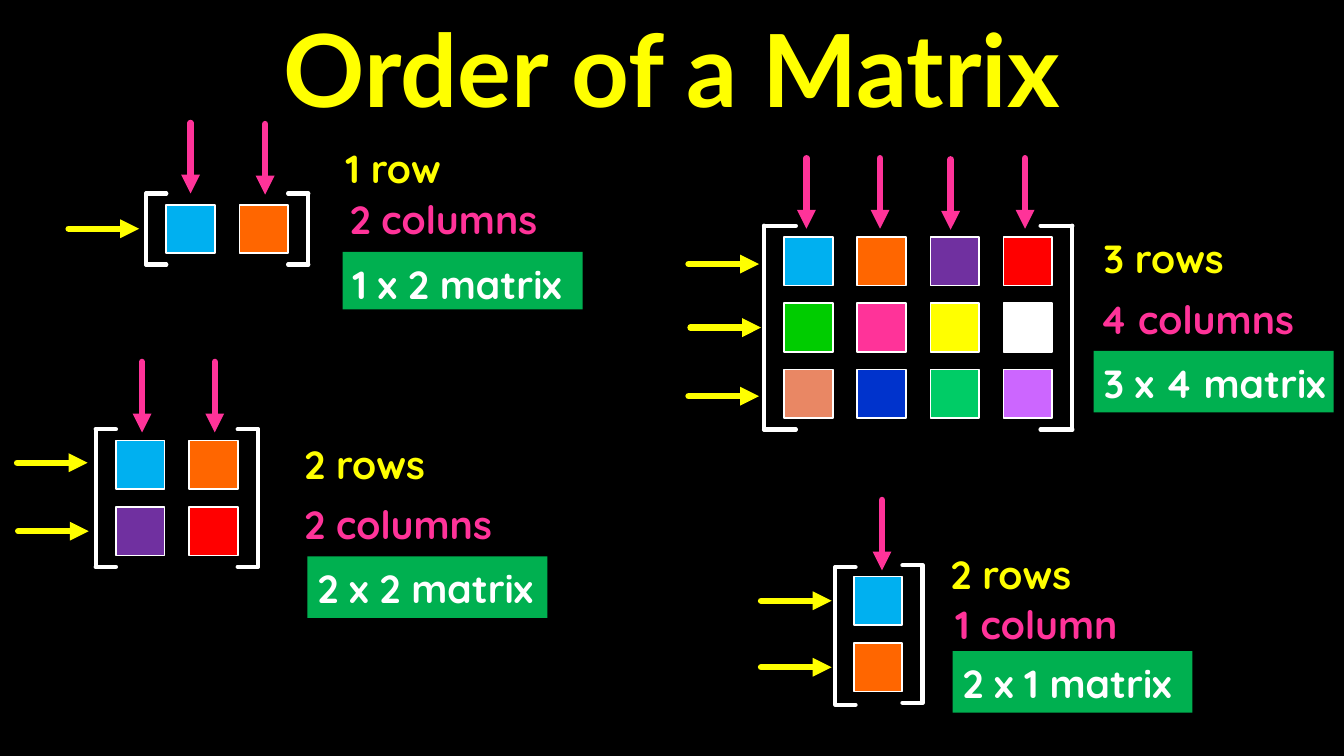
import lxml.etree
import pptx
import pptx.dml.color
import pptx.enum.shapes
import pptx.enum.text
import pptx.oxml.ns
import pptx.util

COLORS = {
    "black": "000000", "white": "FFFFFF", "yellow": "FFFF00", "pink": "FF3399",
    "box": "00B050", "blue": "00B0F0", "orange": "FF6600", "purple": "7030A0",
    "red": "FF0000", "green": "00CC00", "salmon": "E98764", "navy": "0033CC",
    "mint": "00CC66", "lilac": "CC66FF",
}
MATRICES = [
    {
        "cells": [["blue", "orange"]],
        "origin": (118.8, 146.2), "arm": 14.4, "left_shift": 0,
        "row_arrows": [(49, 163.4)],
        "column_arrows": [(136.1, 87.8), (189.4, 88.6)],
        "captions": [("1 row", 239.8, 97.2, 87.8, 41),
                     ("2 columns", 242.6, 133.9, 154, 41),
                     ("1 x 2 matrix", 244.8, 180, 171.4, 41)],
    },
    {
        "cells": [["blue", "orange"], ["purple", "red"]],
        "origin": (82.8, 314.6), "arm": 14.4, "left_shift": 0,
        "row_arrows": [(12.2, 330.5), (13, 379.4)],
        "column_arrows": [(101.5, 258.5), (153.4, 258.5)],
        "captions": [("2 rows", 210.2, 308.9, 100.8, 41),
                     ("2 columns", 210.2, 351.4, 154, 41),
                     ("2 x 2 matrix", 219.6, 397.4, 171.4, 43.9)],
    },
    {
        "cells": [["blue", "orange", "purple", "red"],
                  ["green", "pink", "yellow", "white"],
                  ["salmon", "navy", "mint", "lilac"]],
        "origin": (560.2, 169.2), "arm": 22.7, "left_shift": 0,
        "row_arrows": [(491.8, 188.6), (493.2, 234), (491.8, 283)],
        "column_arrows": [(576, 113), (628.6, 113), (679, 113.8), (732.2, 113)],
        "captions": [("3 rows", 781.2, 161.3, 100.8, 43.9),
                     ("4 columns", 778.3, 205.2, 154, 43.9),
                     ("3 x 4 matrix", 781.2, 250.6, 171.4, 43.9)],
    },
    {
        "cells": [["blue"], ["orange"]],
        "origin": (609.8, 411.8), "arm": 14.4, "left_shift": 1.3,
        "row_arrows": [(543.6, 429.1), (543.6, 476.6)],
        "column_arrows": [(630, 357.1)],
        "captions": [("2 rows", 671.8, 387.4, 100.8, 41),
                     ("1 column", 675.4, 422.6, 141.8, 41),
                     ("2 x 1 matrix", 680.4, 465.1, 171.4, 43.9)],
    },
]
CAPTION_STYLES = [("yellow", None), ("pink", None), ("white", "box")]
CELL = 34.8
COLUMN_PITCH, ROW_PITCH = 52.2, 47.4
SIDE_GAP, END_GAP = 14.4, 8
ARROW = 50.4
Pt = pptx.util.Pt


def rgb(name):
    """Return the named colour."""
    return pptx.dml.color.RGBColor.from_string(COLORS[name])


def add_text(slide, text, left, top, width, height, *, color, font="Quicksand", size=28,
             fill=None, right_inset=0, centered=False, line_spacing=1.07, space_after=8):
    """Add one bold line of text, on a filled box if a fill is given."""
    shape = slide.shapes.add_textbox(Pt(left), Pt(top), Pt(width), Pt(height))
    if fill:
        shape.fill.solid()
        shape.fill.fore_color.rgb = rgb(fill)
    frame = shape.text_frame
    frame.word_wrap = True
    frame.auto_size = pptx.enum.text.MSO_AUTO_SIZE.NONE
    frame.margin_right = Pt(right_inset)
    paragraph = frame.paragraphs[0]
    paragraph.line_spacing = line_spacing
    paragraph.space_after = Pt(space_after)
    if centered:
        paragraph.alignment = pptx.enum.text.PP_ALIGN.CENTER
    run = paragraph.add_run()
    run.text = text
    run.font.name, run.font.size, run.font.bold = font, Pt(size), True
    run.font.color.rgb = rgb(color)


def add_line(shapes, start, end, color, width, arrow=False):
    """Add a round-capped straight line, with an arrowhead if asked."""
    connector = shapes.add_connector(
        pptx.enum.shapes.MSO_CONNECTOR.STRAIGHT, *(Pt(value) for value in start + end))
    connector.line.color.rgb = rgb(color)
    connector.line.width = Pt(width)
    qualify = pptx.oxml.ns.qn
    properties = connector._element.spPr
    outline = properties.find(qualify("a:ln"))
    outline.set("cap", "rnd")
    if arrow:
        lxml.etree.SubElement(outline, qualify("a:tailEnd")).set("type", "triangle")
    lxml.etree.SubElement(properties, qualify("a:effectLst"))


def add_matrix(slide, matrix):
    """Add the bracketed grid of coloured cells as a group."""
    shapes = slide.shapes.add_group_shape().shapes
    left, top = matrix["origin"]
    rows = matrix["cells"]
    right = left + (len(rows[0]) - 1) * COLUMN_PITCH + CELL
    bottom = top + (len(rows) - 1) * ROW_PITCH + CELL
    shift = matrix["left_shift"]
    brackets = [(left - SIDE_GAP + shift, matrix["arm"], shift),
                (right + SIDE_GAP, -matrix["arm"], 0)]
    for x, arm, drop in brackets:
        upper, lower = top - END_GAP + drop, bottom + END_GAP + drop
        for y in (upper, lower):
            add_line(shapes, (x, y), (x + arm, y), "white", 3)
        add_line(shapes, (x, lower), (x, upper), "white", 3)
    for row, colors in enumerate(rows):
        for column, color in enumerate(colors):
            cell = shapes.add_shape(
                pptx.enum.shapes.MSO_SHAPE.RECTANGLE, Pt(left + column * COLUMN_PITCH),
                Pt(top + row * ROW_PITCH), Pt(CELL), Pt(CELL))
            cell.shadow.inherit = False
            cell.fill.solid()
            cell.fill.fore_color.rgb = rgb(color)
            cell.line.color.rgb = rgb("white")
            cell.line.width = Pt(1.25)


def main():
    """Build the slide on the order of a matrix."""
    presentation = pptx.Presentation()
    presentation.slide_width, presentation.slide_height = Pt(960), Pt(540)
    slide = presentation.slides.add_slide(presentation.slide_layouts[6])
    slide.background.fill.solid()
    slide.background.fill.fore_color.rgb = rgb("black")
    add_text(slide, "Order of a Matrix", 0, 1.4, 960, 94.3, color="yellow", font="Lato",
             size=72, right_inset=7.2, centered=True, line_spacing=1.0, space_after=0)
    for matrix in MATRICES:
        add_matrix(slide, matrix)
        for x, y in matrix["row_arrows"]:
            add_line(slide.shapes, (x, y), (x + ARROW, y), "yellow", 4.5, arrow=True)
        for x, y in matrix["column_arrows"]:
            add_line(slide.shapes, (x, y), (x, y + ARROW), "pink", 4.5, arrow=True)
        for caption, (color, fill) in zip(matrix["captions"], CAPTION_STYLES):
            add_text(slide, *caption, color=color, fill=fill)
    presentation.save("out.pptx")


if __name__ == "__main__":
    main()
